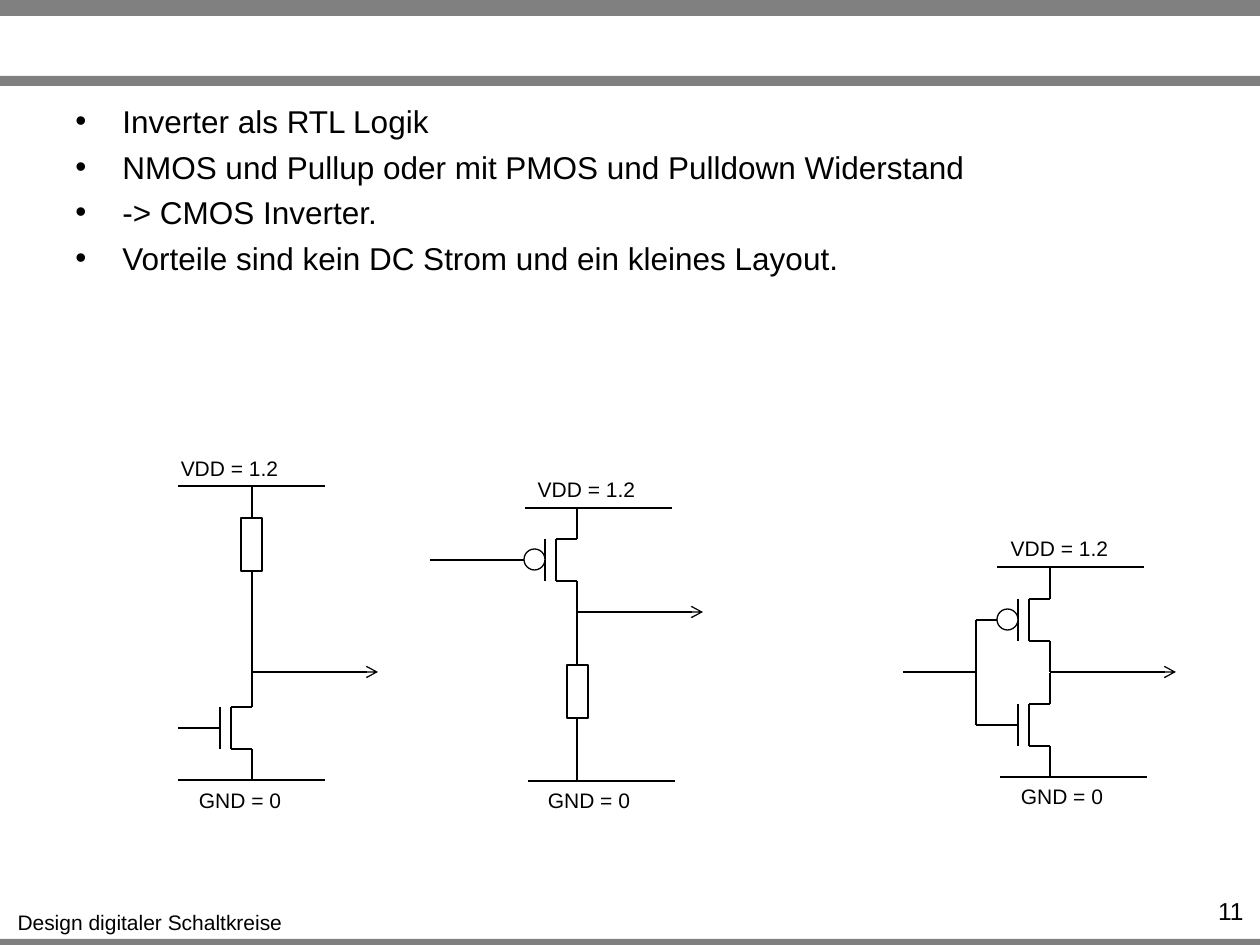
from lxml import etree
from pptx import Presentation
from pptx.dml.color import RGBColor
from pptx.enum.shapes import MSO_CONNECTOR, MSO_SHAPE
from pptx.enum.text import PP_ALIGN
from pptx.oxml.ns import qn
from pptx.util import Pt

SCALE = 914400 / 126
STRAIGHT = MSO_CONNECTOR.STRAIGHT
RECTANGLE, OVAL = MSO_SHAPE.RECTANGLE, MSO_SHAPE.OVAL
LEFT, CENTER, RIGHT = PP_ALIGN.LEFT, PP_ALIGN.CENTER, PP_ALIGN.RIGHT
COLORS = {name: RGBColor.from_string(value) for name, value in
          {"bar": "808080", "ink": "000000", "paper": "FFFFFF"}.items()}

presentation = Presentation()
presentation.slide_width = round(1260 * SCALE)
presentation.slide_height = round(945 * SCALE)
slide = presentation.slides.add_slide(presentation.slide_layouts[6])


def add_line(shapes, *ends, arrow=False):
    connector = shapes.add_connector(STRAIGHT, *[round(end * SCALE) for end in ends])
    connector.line.color.rgb = COLORS["ink"]
    connector.line.width = Pt(0.75)
    if arrow:
        etree.SubElement(connector.get_or_add_ln(), qn("a:tailEnd"), type="arrow")
    etree.SubElement(connector._element.spPr, qn("a:effectLst"))


def add_box(shapes, kind, *bounds, fill=None, outline=True):
    shape = shapes.add_shape(kind, *[round(value * SCALE) for value in bounds])
    shape.shadow.inherit = False
    if fill:
        shape.fill.solid()
        shape.fill.fore_color.rgb = COLORS[fill]
    else:
        shape.fill.background()
    if outline:
        shape.line.color.rgb = COLORS["ink"]
        shape.line.width = Pt(0.75)
    else:
        shape.line.fill.background()


for top, height in [(939, 10), (0, 16), (76, 10)]:
    add_box(slide.shapes, RECTANGLE, 0, top, 1260, height, fill="bar", outline=False)

bullets = [
    "Inverter als RTL Logik",
    "NMOS und Pullup oder mit PMOS und Pulldown Widerstand",
    "-> CMOS Inverter.",
    "Vorteile sind kein DC Strom und ein kleines Layout.",
]
supply, ground = "VDD = 1.2", "GND = 0"
texts = [
    (["Design digitaler Schaltkreise"], (4, 903, 292, 38), 12, CENTER, False),
    (bullets, (63, 96, 1134, 199), 18, LEFT, True),
    (["11"], (1147, 890, 109, 30), 14, RIGHT, True),
    ([supply], (168, 449, 123, 38), 12, CENTER, False),
    ([ground], (186, 781, 108, 38), 12, CENTER, False),
    ([supply], (525, 470, 123, 38), 12, CENTER, False),
    ([ground], (535, 781, 108, 38), 12, CENTER, False),
    ([supply], (998, 529, 123, 38), 12, CENTER, False),
    ([ground], (1008, 777, 108, 38), 12, CENTER, False),
]
for lines, bounds, size, alignment, wrap in texts:
    shape = slide.shapes.add_textbox(*[round(value * SCALE) for value in bounds])
    frame = shape.text_frame
    frame.word_wrap = wrap
    frame.text = "\n".join(lines)
    for index, paragraph in enumerate(frame.paragraphs):
        paragraph.alignment = alignment
        if lines is bullets:
            properties = paragraph._p.get_or_add_pPr()
            indent = round(47 * SCALE)
            properties.set("marL", str(indent))
            properties.set("indent", str(-indent))
            etree.SubElement(properties, qn("a:buFont"), typeface="Arial")
            etree.SubElement(properties, qn("a:buChar"), char="•")
            paragraph.space_before = Pt(4.4 if index else 0)
        for name, value in {"name": "Arial", "size": Pt(size)}.items():
            setattr(paragraph.font, name, value)
        paragraph.font.color.rgb = COLORS["ink"]

transistors = [(577, 560, True), (252, 728, False), (1050, 725, False), (1050, 620, True)]
for channel, gate, is_pmos in transistors:
    shapes = slide.shapes.add_group_shape().shapes
    for side in (-1, 1):
        add_line(shapes, channel, gate + 21 * side, channel - 21, gate + 21 * side)
        add_line(shapes, channel, gate + 21 * side, channel, gate + 52 * side)
    for plate in (channel - 21, channel - 32):
        add_line(shapes, plate, gate - 21, plate, gate + 21)
    add_line(shapes, channel - 74, gate, channel - 32, gate)
    if is_pmos:
        add_box(shapes, OVAL, channel - 53, gate - 11, 21, 21, fill="paper")

rails = [(178, 486), (178, 780), (525, 508), (528, 781), (997, 567), (1000, 777)]
for left, height in rails:
    add_line(slide.shapes, left, height, left + 147, height)

for left, top in [(241, 518), (567, 665)]:
    add_box(slide.shapes, RECTANGLE, left, top, 21, 53)

for left, height in [(252, 672), (577, 612), (1050, 672)]:
    add_line(slide.shapes, left, height, left + 126, height, arrow=True)

wires = [
    (252, 486, 252, 518),
    (252, 571, 252, 676),
    (430, 560, 503, 560),
    (577, 612, 577, 665),
    (577, 718, 577, 781),
    (903, 672, 976, 672),
    (976, 620, 976, 725),
]
for wire in wires:
    add_line(slide.shapes, *wire)

presentation.save("out.pptx")
